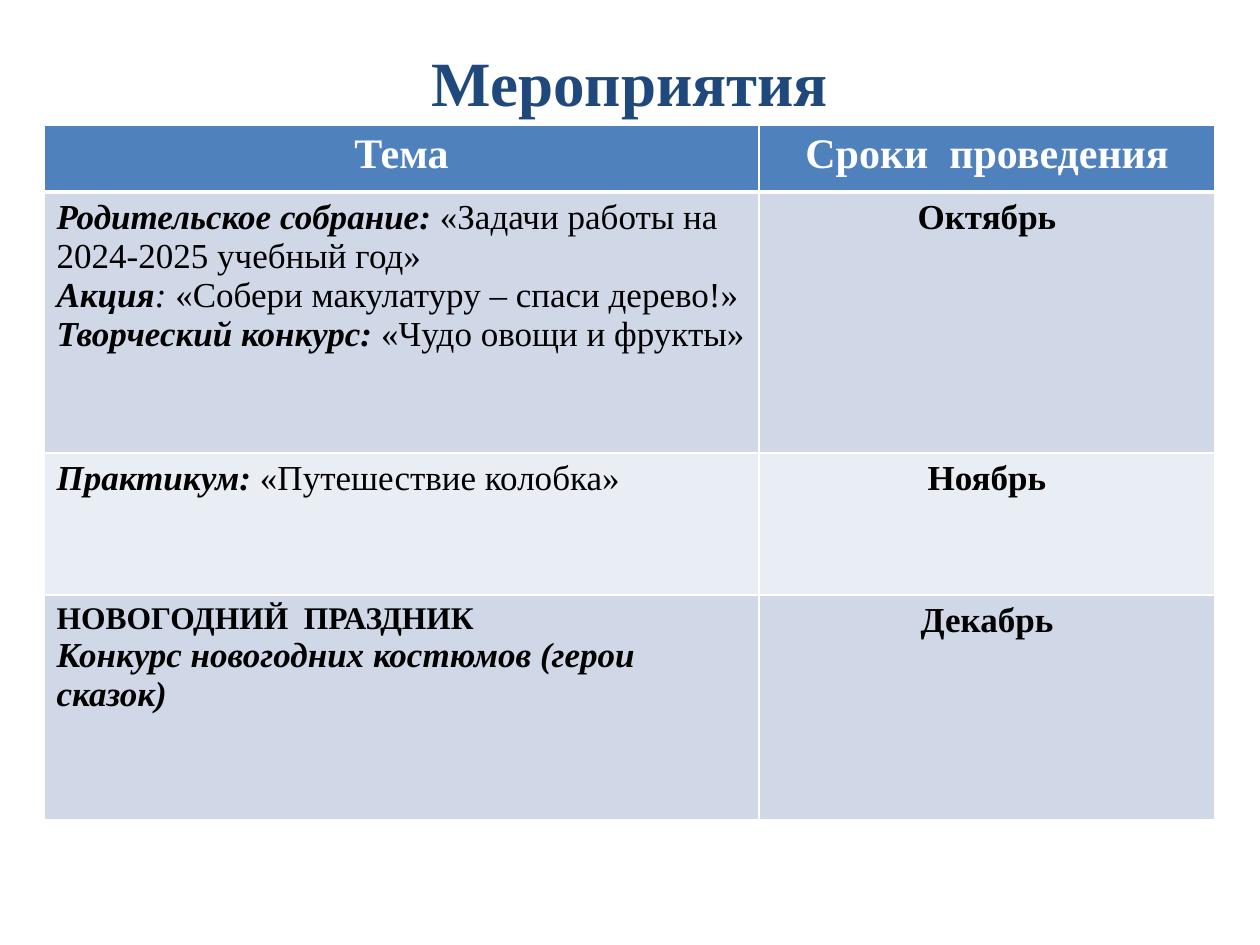
from lxml import etree
from pptx import Presentation
from pptx import util as u
from pptx.dml.color import RGBColor
from pptx.enum import text
from pptx.oxml.ns import qn

PX_PER_INCH = 126
FONT = "Times New Roman"
WHITE, BLACK, NAVY = "FFFFFF", "000000", "1F497D"
HEADER_FILL, BAND_FILLS = "4F81BD", ("D0D8E8", "E9EDF4")

COLUMN_WIDTHS = (715, 456)
ROW_HEIGHTS = (67, 261, 142, 225)
HEADINGS = ("Тема", "Сроки  проведения")

# Each topic is a list of paragraphs; each paragraph is a list of (wording, format).
LABEL = {"bold": True, "italic": True}
PLAIN = {}
EVENTS = (
    ([[("Родительское собрание: ", LABEL),
       ("«Задачи работы на 2024-2025 учебный год»", PLAIN)],
      [("Акция", LABEL), (": ", {"italic": True}),
       ("«Собери макулатуру – спаси дерево!»", PLAIN)],
      [("Творческий конкурс: ", LABEL), ("«Чудо овощи и фрукты»", PLAIN)]],
     "Октябрь"),
    ([[("Практикум:", LABEL), (" «Путешествие колобка»", PLAIN)]], "Ноябрь"),
    ([[("НОВОГОДНИЙ  ПРАЗДНИК", {"bold": True, "size": 18})],
      [("Конкурс новогодних костюмов (герои сказок)", LABEL)]],
     "Декабрь"),
)


def px(length):
    return u.Emu(round(length * 914400 / PX_PER_INCH))


def color(value):
    return RGBColor.from_string(value)


def add_text(paragraph, wording, size=20, fill=BLACK, bold=False, italic=False):
    run = paragraph.add_run()
    run.text = wording
    font = run.font
    font.name, font.size = FONT, u.Pt(size)
    font.bold, font.italic = bold, italic
    font.color.rgb = color(fill)


def fill_cell(cell, paragraphs, centered=False):
    frame = cell.text_frame
    for index, parts in enumerate(paragraphs):
        paragraph = frame.add_paragraph() if index else frame.paragraphs[0]
        if centered:
            paragraph.alignment = text.PP_ALIGN.CENTER
        for wording, style in parts:
            add_text(paragraph, wording, **style)


def style_cell(cell, fill, top=1, bottom=1):
    """Set the fill and white borders; top and bottom are widths in points."""
    cell.fill.solid()
    cell.fill.fore_color.rgb = color(fill)
    properties = cell._tc.get_or_add_tcPr()
    widths = {"a:lnL": 1, "a:lnR": 1, "a:lnT": top, "a:lnB": bottom}
    for index, (tag, width) in enumerate(widths.items()):
        line = etree.Element(qn(tag), w=str(u.Pt(width)))
        solid = etree.SubElement(line, qn("a:solidFill"))
        etree.SubElement(solid, qn("a:srgbClr"), val=WHITE)
        properties.insert(index, line)


def place_title(slide, left, top, width, height):
    title = slide.shapes.title
    title.left, title.top = px(left), px(top)
    title.width, title.height = px(width), px(height)
    frame = title.text_frame
    frame.vertical_anchor = text.MSO_ANCHOR.MIDDLE
    frame.auto_size = text.MSO_AUTO_SIZE.NONE
    paragraph = frame.paragraphs[0]
    paragraph.alignment = text.PP_ALIGN.CENTER
    add_text(paragraph, "Мероприятия", size=36, fill=NAVY, bold=True)


def add_schedule(slide, left, top):
    table = slide.shapes.add_table(
        len(ROW_HEIGHTS), len(COLUMN_WIDTHS), px(left), px(top),
        px(sum(COLUMN_WIDTHS)), px(sum(ROW_HEIGHTS))).table
    for column, width in zip(table.columns, COLUMN_WIDTHS):
        column.width = px(width)
    for row, height in zip(table.rows, ROW_HEIGHTS):
        row.height = px(height)

    heading_style = {"size": 24, "fill": WHITE, "bold": True}
    for cell, heading in zip(table.rows[0].cells, HEADINGS):
        fill_cell(cell, [[(heading, heading_style)]], centered=True)
        style_cell(cell, HEADER_FILL, bottom=3)

    for index, (topic, month) in enumerate(EVENTS):
        topic_cell, month_cell = table.rows[index + 1].cells
        fill_cell(topic_cell, topic)
        fill_cell(month_cell, [[(month, {"bold": True})]], centered=True)
        for cell in (topic_cell, month_cell):
            style_cell(cell, BAND_FILLS[index % 2], top=1 if index else 3)


def main():
    presentation = Presentation()
    presentation.slide_width, presentation.slide_height = px(1260), px(945)
    slide = presentation.slides.add_slide(presentation.slide_layouts[5])
    add_schedule(slide, 44, 125)
    place_title(slide, 63, 38, 1134, 87)
    presentation.save("out.pptx")


if __name__ == "__main__":
    main()
